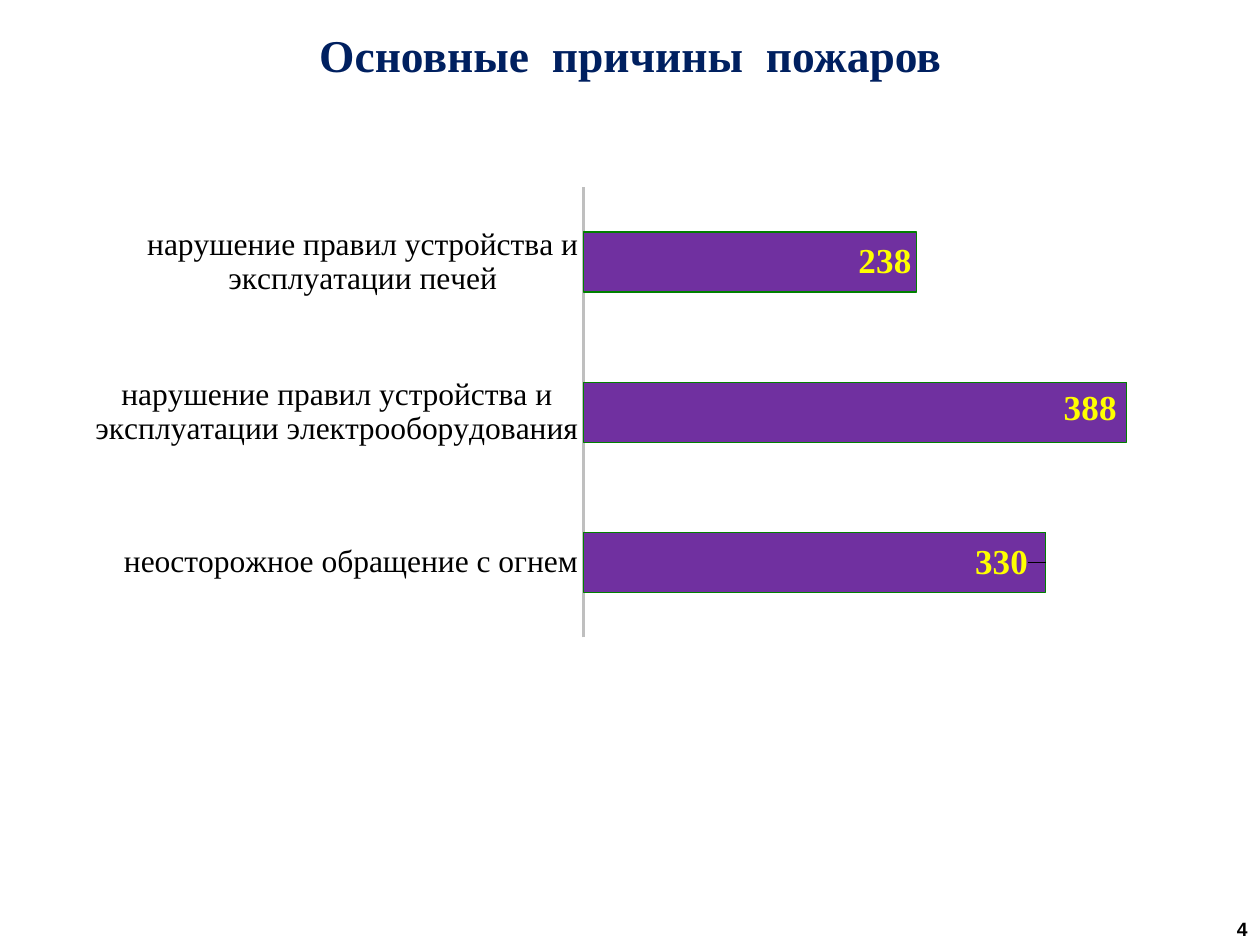
from dataclasses import dataclass
from typing import Any

from lxml import etree
from pptx import Presentation
from pptx.chart import data as cd
from pptx.dml.color import RGBColor
from pptx.enum import chart as ch, text as tx
from pptx.oxml import ns
from pptx.util import Inches, Pt

NAVY = RGBColor(0x00, 0x20, 0x60)
BLACK = RGBColor(0x00, 0x00, 0x00)
PURPLE = RGBColor(0x70, 0x30, 0xA0)
GREEN = RGBColor(0x00, 0x80, 0x00)
YELLOW = RGBColor(0xFF, 0xFF, 0x00)
GREY = RGBColor(0xBF, 0xBF, 0xBF)
SERIF = "Times New Roman"


@dataclass(frozen=True)
class Cause:
    name: str
    fires: int
    label_dx: float = 0
    label_dy: float = 0


CAUSES = [
    Cause("неосторожное обращение с огнем", 330, -0.01),
    Cause("нарушение правил устройства и эксплуатации электрооборудования", 388, -0.004, -0.005),
    Cause("нарушение правил устройства и эксплуатации печей", 238),
]
LABEL_FORMAT = {"name": SERIF, "size": Pt(20), "bold": True, "color": YELLOW}


def set_font(font: Any, formats: dict[str, Any]) -> None:
    for key, value in formats.items():
        if key == "color":
            font.color.rgb = value
        else:
            setattr(font, key, value)


def write(sp: Any, words: str, align: Any, formats: dict[str, Any]) -> None:
    tf = sp.text_frame
    tf.word_wrap = True
    tf.vertical_anchor = tx.MSO_ANCHOR.MIDDLE
    p = tf.paragraphs[0]
    p.alignment = align
    r = p.add_run()
    r.text = words
    set_font(r.font, formats)


def manual_layout(values: dict[str, Any]) -> Any:
    layout = etree.Element(ns.qn("c:layout"))
    manual = etree.SubElement(layout, ns.qn("c:manualLayout"))
    for tag, value in values.items():
        etree.SubElement(manual, ns.qn(f"c:{tag}")).set("val", str(value))
    return layout


def place_plot(chart: Any) -> None:
    area = chart.plots[0]._element.getparent()
    for old in area.findall(ns.qn("c:layout")):
        area.remove(old)
    area.insert(0, manual_layout({
        "layoutTarget": "inner", "xMode": "edge", "yMode": "edge",
        "x": 0.478, "y": 0.102, "w": 0.512, "h": 0.557,
    }))


def shift_label(series: Any, index: int, cause: Cause) -> None:
    label = series.points[index].data_label
    set_font(label.font, LABEL_FORMAT)
    label.position = ch.XL_LABEL_POSITION.INSIDE_END
    item = series._element.find(f".//{ns.qn('c:dLbl')}[{ns.qn('c:idx')}][last()]")
    item.find(ns.qn("c:idx")).addnext(
        manual_layout({"x": cause.label_dx, "y": cause.label_dy}))


def add_causes_chart(s: Any, causes: list[Cause]) -> None:
    data = cd.CategoryChartData()
    data.categories = [cause.name for cause in causes]
    data.add_series("Series 1", [cause.fires for cause in causes])
    chart = s.shapes.add_chart(
        ch.XL_CHART_TYPE.BAR_STACKED,
        Inches(-0.04), Inches(0.83), Inches(9.77), Inches(6.42), data).chart
    chart.has_legend = False
    chart.has_title = False
    set_font(chart.font, {"name": SERIF, "size": Pt(10), "color": BLACK})
    place_plot(chart)

    axis = chart.category_axis
    axis.major_tick_mark = ch.XL_TICK_MARK.NONE
    axis.format.line.color.rgb = GREY
    axis.format.line.width = Pt(1.5)
    set_font(axis.tick_labels.font, {"name": SERIF, "size": Pt(18), "color": BLACK})

    scale = chart.value_axis
    scale.minimum_scale, scale.maximum_scale = 0, 450
    scale.has_major_gridlines = False
    scale.visible = False

    plot = chart.plots[0]
    plot.gap_width, plot.overlap = 150, 100
    plot.vary_by_categories = False
    series = plot.series[0]
    series.format.fill.solid()
    series.format.fill.fore_color.rgb = PURPLE
    series.format.line.color.rgb = GREEN
    series.format.line.width = Pt(0.75)

    labels = series.data_labels
    labels.show_value = True
    labels.position = ch.XL_LABEL_POSITION.INSIDE_END
    set_font(labels.font, LABEL_FORMAT)
    for index, cause in enumerate(causes):
        if cause.label_dx or cause.label_dy:
            shift_label(series, index, cause)


def main() -> None:
    prs = Presentation()
    prs.slide_width, prs.slide_height = Inches(10), Inches(7.5)
    s = prs.slides.add_slide(prs.slide_layouts[5])

    title = s.shapes.title
    title.left, title.top = Inches(1.02), Inches(0.16)
    title.width, title.height = Inches(7.97), Inches(0.54)
    write(title, "Основные  причины  пожаров", tx.PP_ALIGN.CENTER,
          {"name": SERIF, "size": Pt(26), "bold": True, "color": NAVY})

    add_causes_chart(s, CAUSES)

    number = s.shapes.add_textbox(Inches(7.92), Inches(7.25), Inches(2.08), Inches(0.25))
    write(number, "4", tx.PP_ALIGN.RIGHT,
          {"name": "Arial", "size": Pt(11), "bold": True, "color": BLACK})

    prs.save("out.pptx")


if __name__ == "__main__":
    main()
